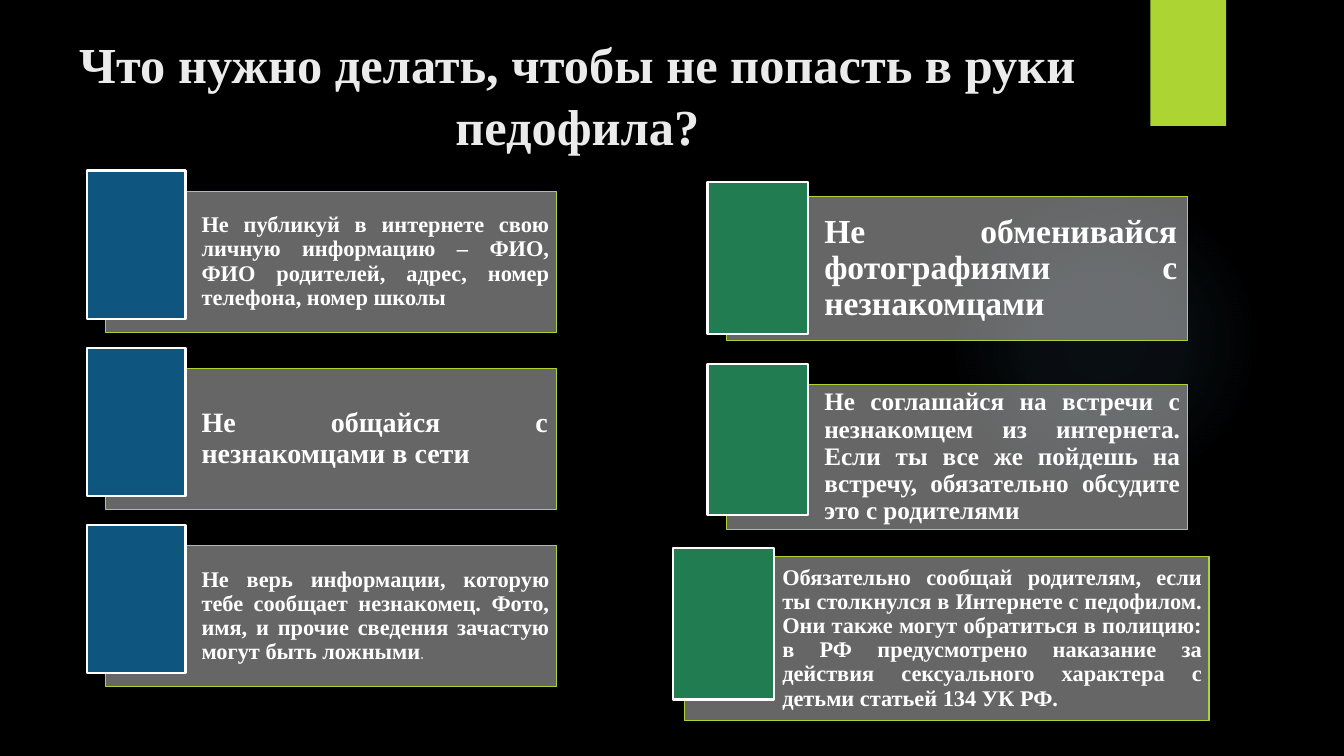
"""Build a slide of six online safety rules for children."""
from dataclasses import dataclass

from pptx import Presentation
from pptx.dml.color import RGBColor
from pptx.enum.shapes import MSO_SHAPE as Shape
from pptx.enum.text import MSO_ANCHOR as Anchor, PP_ALIGN as Align
from pptx.oxml import parse_xml
from pptx.oxml.ns import nsdecls, qn
from pptx.util import Pt

BLACK = RGBColor(0x00, 0x00, 0x00)
WHITE = RGBColor(0xFF, 0xFF, 0xFF)
TITLE_GREY = RGBColor(0xEB, 0xEB, 0xEB)
LIME = RGBColor(0xAC, 0xD4, 0x33)
BLUE = RGBColor(0x0E, 0x55, 0x80)
GREEN = RGBColor(0x21, 0x7C, 0x51)
GLOW_BLUE = RGBColor(0x7A, 0xC4, 0xF0)
SERIF = "Times New Roman"
SANS = "Quicksand"
ROW_PITCH = 126.5


@dataclass(frozen=True)
class Box:
    left: float
    top: float
    width: float
    height: float

    def emu(self) -> tuple:
        return Pt(self.left), Pt(self.top), Pt(self.width), Pt(self.height)


@dataclass(frozen=True)
class Card:
    panel: Box
    tile: Box
    color: RGBColor
    indent: float
    pad: float
    size: int
    text: str
    full_stop: str = ""


def left_card(row: int, pad: float, size: int, text: str, full_stop: str = "") -> Card:
    shift = row * ROW_PITCH
    return Card(Box(75.6, 136.7 + shift, 321.8, 100.6), Box(61.9, 121.8 + shift, 70.6, 105.8),
                BLUE, 68.4, pad, size, text, full_stop)


def right_card(panel: Box, left: float, top: float, pad: float, size: int, text: str) -> Card:
    return Card(panel, Box(left, top, 72, 108), GREEN, 69.8, pad, size, text)


CARDS = [
    left_card(0, 5, 16, "Не публикуй в интернете свою личную информацию – ФИО, "
              "ФИО родителей, адрес, номер телефона, номер школы"),
    left_card(1, 6, 20, "Не общайся с незнакомцами в сети"),
    left_card(2, 5, 16, "Не верь информации, которую тебе сообщает незнакомец. Фото, имя, "
              "и прочие сведения зачастую могут быть ложными", "."),
    right_card(Box(519, 140.4, 329, 103), 505.4, 130.3, 7.2, 24,
               "Не обменивайся фотографиями с незнакомцами"),
    right_card(Box(519, 275, 329, 103), 505.4, 260, 5, 18,
               "Не соглашайся на встречи с незнакомцем из интернета. Если ты все же "
               "пойдешь на встречу, обязательно обсудите это с родителями"),
    right_card(Box(489, 397.4, 374.6, 117.4), 481, 391.7, 5, 16,
               "Обязательно сообщай родителям, если ты столкнулся в Интернете с педофилом. "
               "Они также могут обратиться в полицию: в РФ предусмотрено наказание за "
               "действия сексуального характера с детьми статьей 134 УК РФ."),
]


def add_block(s, box: Box, fill: RGBColor, line: RGBColor | None = None, width: float = 0):
    sp = s.shapes.add_shape(Shape.RECTANGLE, *box.emu())
    sp.shadow.inherit = False
    sp.fill.solid()
    sp.fill.fore_color.rgb = fill
    if line is None:
        sp.line.fill.background()
    else:
        sp.line.color.rgb = line
        sp.line.width = Pt(width)
    return sp


def add_glow(s) -> None:
    sp = s.shapes.add_shape(Shape.OVAL, *Box(677.5, 131.8, 221.8, 221.8).emu())
    sp.shadow.inherit = False
    sp.line.fill.background()
    stops = "".join(
        f'<a:gs pos="{pos}000"><a:srgbClr val="{GLOW_BLUE}">'
        f'<a:alpha val="{alpha}000"/></a:srgbClr></a:gs>'
        for pos, alpha in ((0, 7), (36, 6), (69, 0), (100, 0)))
    grad = parse_xml(
        f'<a:gradFill {nsdecls("a")}><a:gsLst>{stops}</a:gsLst><a:path path="circle">'
        '<a:fillToRect l="50000" t="50000" r="50000" b="50000"/></a:path></a:gradFill>')
    sp.element.spPr.find(qn("a:prstGeom")).addnext(grad)


def add_title(s, text: str) -> None:
    tf = s.shapes.add_textbox(*Box(8.6, 19.4, 807.8, 88.6).emu()).text_frame
    tf.word_wrap = True
    p = tf.paragraphs[0]
    p.text = text
    p.alignment = Align.CENTER
    p.line_spacing = Pt(44)
    set_font(p.font, SERIF, 36, TITLE_GREY, True)


def set_font(font, name: str, size: float, color: RGBColor, bold: bool) -> None:
    font.name = name
    font.size = Pt(size)
    font.color.rgb = color
    font.bold = bold


def add_card(s, card: Card) -> None:
    sp = add_block(s, card.panel, WHITE, LIME, 0.75)
    color = sp.element.spPr.find(qn("a:solidFill"))[0]
    color.append(parse_xml(f'<a:alpha {nsdecls("a")} val="40000"/>'))
    tf = sp.text_frame
    tf.word_wrap = True
    tf.vertical_anchor = Anchor.MIDDLE
    tf.margin_left = Pt(card.indent)
    tf.margin_top = tf.margin_right = tf.margin_bottom = Pt(card.pad)
    p = tf.paragraphs[0]
    p.alignment = Align.JUSTIFY
    p.line_spacing = 0.9
    p.text = card.text
    set_font(p.font, SERIF, card.size, WHITE, True)
    if card.full_stop:
        r = p.add_run()
        r.text = card.full_stop
        set_font(r.font, SANS, 14, WHITE, False)
    add_block(s, card.tile, card.color, WHITE, 1.5)


def main() -> None:
    prs = Presentation()
    prs.slide_width, prs.slide_height = Pt(960), Pt(540)
    s = prs.slides.add_slide(prs.slide_layouts[6])
    s.background.fill.solid()
    s.background.fill.fore_color.rgb = BLACK
    add_glow(s)
    add_block(s, Box(821.8, 0, 54, 90), LIME)
    add_title(s, "Что нужно делать, чтобы не попасть в руки педофила?")
    for card in CARDS:
        add_card(s, card)
    prs.save("out.pptx")


if __name__ == "__main__":
    main()
